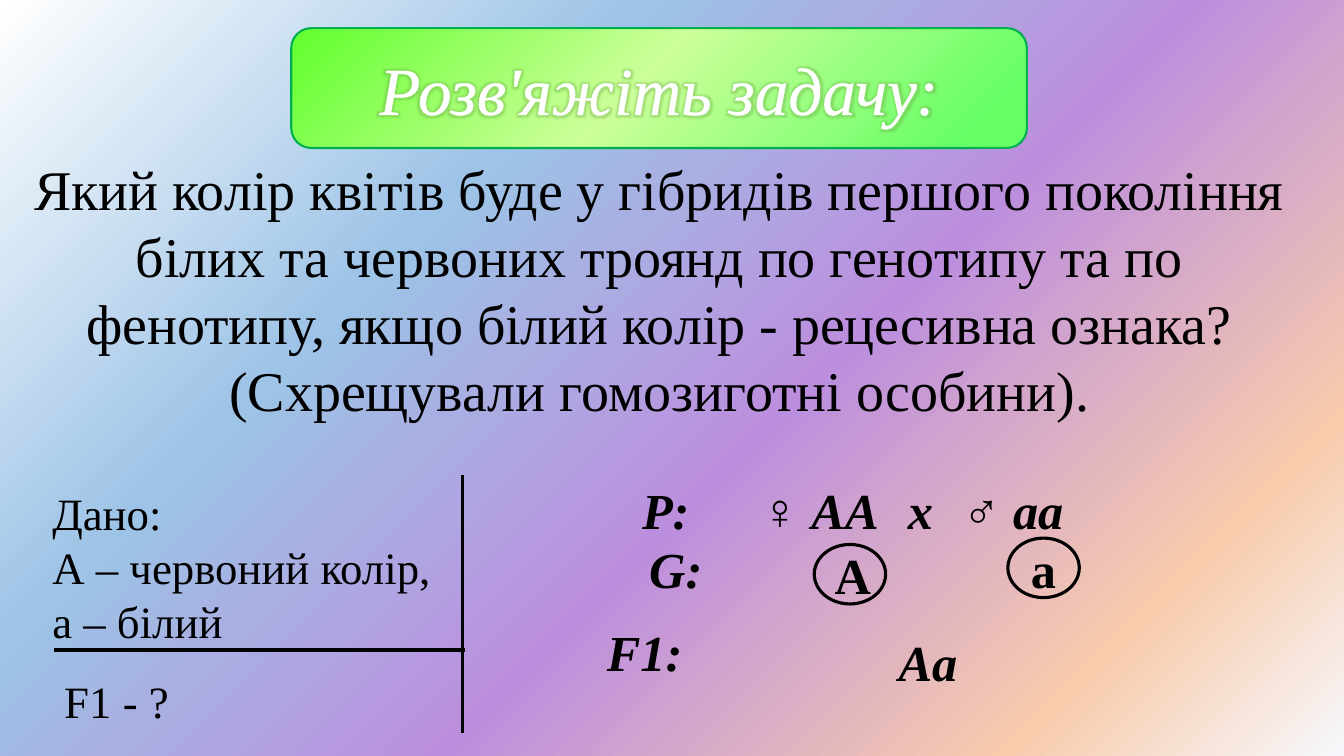
from lxml import etree
from pptx import Presentation, util as u
from pptx.dml.color import RGBColor
from pptx.enum import shapes, text
from pptx.oxml import parse_xml
from pptx.oxml.ns import nsdecls, qn

FONT = "Times New Roman"
BLACK, WHITE = "000000", "FFFFFF"


def write(shape, *lines, size=36, color=BLACK, bold=False, italic=False,
          align="LEFT", anchor="TOP", grow=True, **margins):
    frame = shape.text_frame
    frame.word_wrap = True
    frame.vertical_anchor = getattr(text.MSO_ANCHOR, anchor)
    if grow:
        frame.auto_size = text.MSO_AUTO_SIZE.SHAPE_TO_FIT_TEXT
    for side, length in margins.items():
        setattr(frame, f"margin_{side}", u.Cm(length))
    for i, line in enumerate(lines):
        para = frame.add_paragraph() if i else frame.paragraphs[0]
        para.alignment = getattr(text.PP_ALIGN, align)
        span = para.add_run()
        span.text = line
        span.font.name, span.font.size = FONT, u.Pt(size)
        span.font.bold, span.font.italic = bold, italic
        span.font.color.rgb = RGBColor.from_string(color)
    return frame.paragraphs[0]


def corner_gradient(fill, owner, stops):
    fill.gradient()
    gradient = next(owner.iter(qn("a:gradFill")))
    marks = "".join(f'<a:gs pos="{place * 1000}"><a:srgbClr val="{color}"/></a:gs>'
                    for place, color in stops)
    gradient.getparent().replace(gradient, parse_xml(
        f'<a:gradFill {nsdecls("a")} rotWithShape="1"><a:gsLst>{marks}</a:gsLst>'
        '<a:path path="circle"><a:fillToRect l="100000" t="100000"/></a:path>'
        '<a:tileRect r="-100000" b="-100000"/></a:gradFill>'))


deck = Presentation()
deck.slide_width, deck.slide_height = u.Cm(33.87), u.Cm(19.05)
page = deck.slides.add_slide(deck.slide_layouts[6])
corner_gradient(page.background.fill, page._element, [
    (0, "F6F8FC"), (16, "F8CBAD"), (43, "BC8FDE"), (69, "9DC3E6"), (100, WHITE)])

question = page.shapes.add_textbox(u.Cm(0.41), u.Cm(3.76), u.Cm(32.41), u.Cm(7.09))
write(question,
      "Який колір квітів буде у гібридів першого покоління білих та червоних троянд "
      "по генотипу та по фенотипу, якщо білий колір - рецесивна ознака?",
      "(Схрещували гомозиготні особини).", size=40, align="CENTER")

banner = page.shapes.add_shape(shapes.MSO_SHAPE.ROUNDED_RECTANGLE,
                               u.Cm(7.34), u.Cm(0.71), u.Cm(18.54), u.Cm(3.02))
banner.shadow.inherit = False
corner_gradient(banner.fill, banner._element,
                [(8, "66FF66"), (53, "CCFF99"), (98, "66FF33")])
banner.line.color.rgb = RGBColor.from_string("00B050")
banner.line.width = u.Pt(1.5)
heading = write(banner, "Розв'яжіть задачу:", size=48, color=WHITE, italic=True,
                align="CENTER", anchor="MIDDLE", grow=False)
style = heading.runs[0].font._element
style.insert(0, parse_xml(
    f'<a:ln {nsdecls("a")} w="9525"><a:solidFill><a:srgbClr val="{WHITE}"/>'
    '</a:solidFill></a:ln>'))
style.find(qn("a:solidFill")).addnext(parse_xml(
    f'<a:effectLst {nsdecls("a")}><a:glow rad="63500"><a:srgbClr val="70AD47">'
    '<a:alpha val="40000"/></a:srgbClr></a:glow></a:effectLst>'))

given = page.shapes.add_textbox(u.Cm(1.07), u.Cm(10.92), u.Cm(10.67), u.Cm(5.56))
write(given, "Дано:", "А – червоний колір,", "а – білий", size=32, top=1.33)

for x1, y1, x2, y2 in [(11.66, 11.96, 11.66, 18.47), (1.37, 16.38, 11.73, 16.38)]:
    rule = page.shapes.add_connector(shapes.MSO_CONNECTOR.STRAIGHT,
                                     u.Cm(x1), u.Cm(y1), u.Cm(x2), u.Cm(y2))
    rule.line.color.rgb = RGBColor.from_string(BLACK)
    rule.line.width = u.Pt(2.25)
    etree.SubElement(rule._element.spPr, qn("a:effectLst"))

unknown = page.shapes.add_textbox(u.Cm(1.37), u.Cm(16.84), u.Cm(4.5), u.Cm(1.62))
write(unknown, "F1 - ?", size=32)

parents = page.shapes.add_textbox(u.Cm(12.78), u.Cm(11.94), u.Cm(17.32), u.Cm(1.8))
cross = write(parents, "P:\t♀ АА\tx\t♂ aa", bold=True, italic=True, left=3.4)
tabs = etree.SubElement(cross._p.get_or_add_pPr(), qn("a:tabLst"))
for stop in (3, 6.7, 8.08):
    etree.SubElement(tabs, qn("a:tab"), pos=str(u.Cm(stop)), algn="l")

for label, x, y, margins in [("G:", 12.7, 13.44, {"left": 0.55}),
                             ("F1:", 12.7, 15.52, {"right": 1.52}),
                             ("Aa", 19.84, 15.77, {"right": 1.52})]:
    box = page.shapes.add_textbox(u.Cm(x), u.Cm(y), u.Cm(8.36), u.Cm(1.8))
    write(box, label, bold=True, italic=True, align="CENTER", **margins)

for allele, x, y in [("A", 20.52, 13.72), ("a", 25.4, 13.56)]:
    gamete = page.shapes.add_shape(shapes.MSO_SHAPE.OVAL,
                                   u.Cm(x), u.Cm(y), u.Cm(1.8), u.Cm(1.5))
    gamete.shadow.inherit = False
    gamete.fill.background()
    gamete.line.color.rgb = RGBColor.from_string(BLACK)
    gamete.line.width = u.Pt(2.25)
    write(gamete, allele, bold=True, align="CENTER", anchor="MIDDLE", grow=False)

deck.save("out.pptx")
